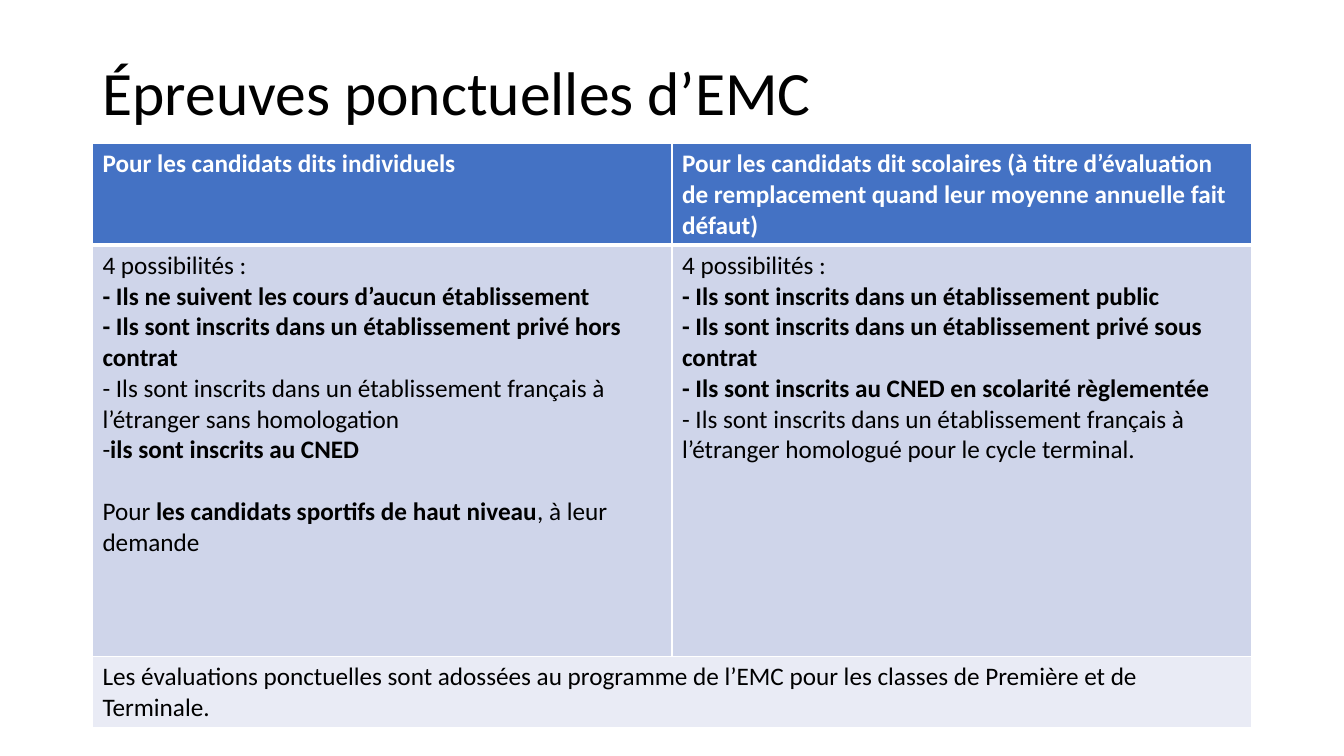
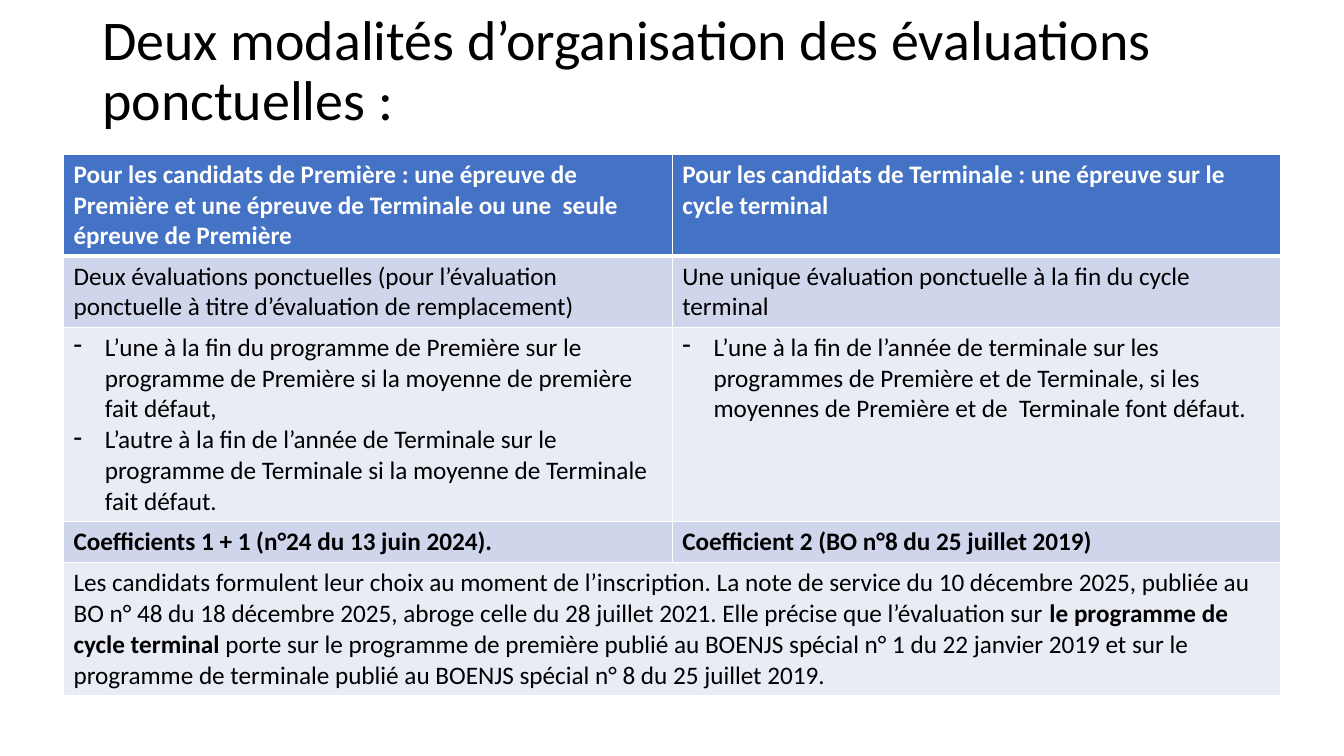
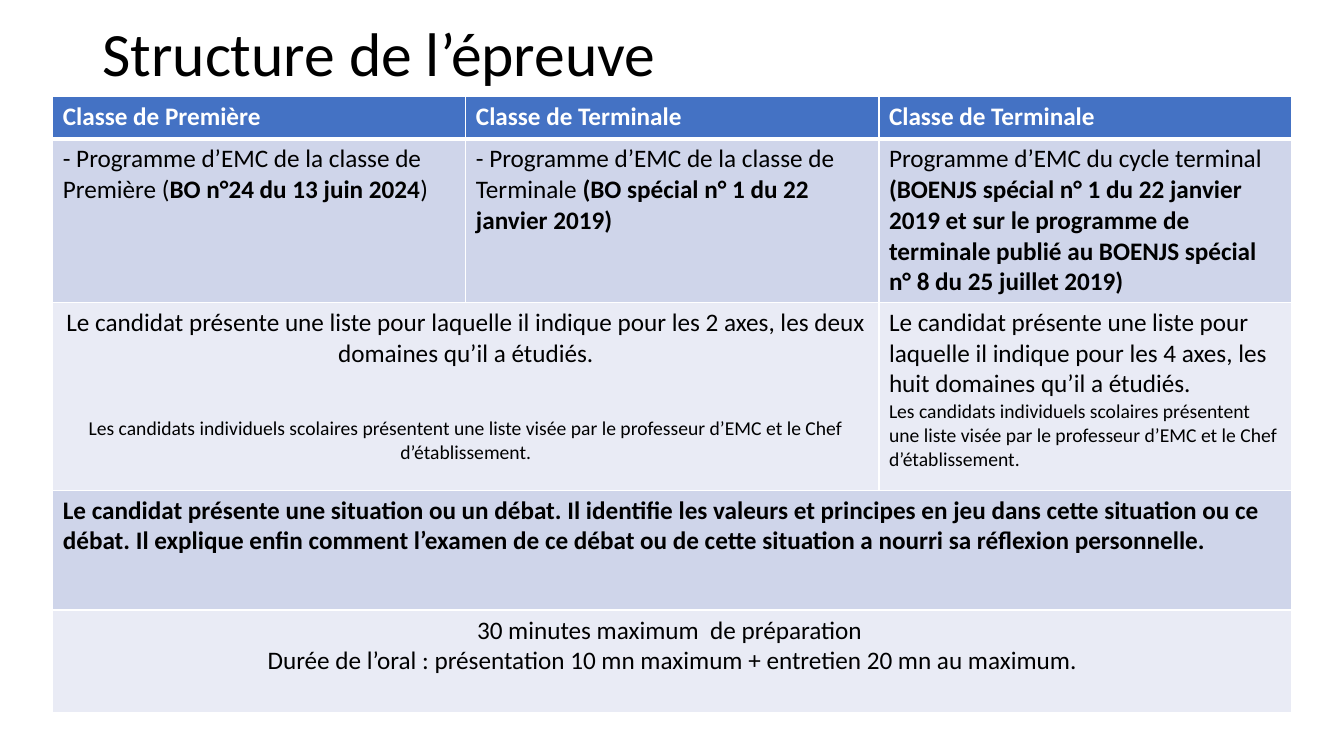
from dataclasses import dataclass

from lxml import etree
from pptx import Presentation
from pptx import util as u
from pptx.dml import color
from pptx.enum import text
from pptx.oxml import ns

# Shared look
COLORS = {"header": "4472C4", "dark_band": "CFD5EA", "light_band": "E9EBF5",
          "ink": "000000", "paper": "FFFFFF"}
FONT = "Calibri"
TITLE_LEFT, TITLE_WIDTH = 2.33, 29.21
BULLET_INDENT = 0.79
THIN, THICK = 1, 3
BOLD_MARK = "**"


@dataclass(frozen=True)
class Para:
    """A paragraph; stretches between ** marks are bold."""
    content: str
    size: float = 18
    centered: bool = False
    dashed: bool = False
    before: float = 0


@dataclass(frozen=True)
class Entry:
    """A table cell covering one or more columns."""
    paras: tuple[Para, ...]
    span: int = 1


@dataclass(frozen=True)
class Row:
    height: float
    entries: tuple[Entry, ...]


@dataclass(frozen=True)
class Page:
    title: str
    title_size: float
    title_top: float
    title_height: float
    left: float
    top: float
    width: float
    columns: int
    rows: tuple[Row, ...]


def entry(*paras: str | Para, span: int = 1) -> Entry:
    return Entry(tuple(Para(p) if isinstance(p, str) else p for p in paras), span)


def rgb(name: str) -> color.RGBColor:
    return color.RGBColor.from_string(COLORS[name])


def add_run(paragraph, content: str, size: float, ink: str, bold: bool) -> None:
    run = paragraph.add_run()
    run.text = content
    font_format = {"name": FONT, "size": u.Pt(size), "bold": bold}
    for attribute, value in font_format.items():
        setattr(run.font, attribute, value)
    run.font.color.rgb = rgb(ink)


def add_dash(paragraph) -> None:
    properties = paragraph._p.get_or_add_pPr()
    indent = u.Cm(BULLET_INDENT)
    properties.set("marL", str(indent))
    properties.set("indent", str(-indent))
    etree.SubElement(properties, ns.qn("a:buFontTx"))
    etree.SubElement(properties, ns.qn("a:buChar"), char="-")


def write_paragraph(paragraph, para: Para, ink: str, all_bold: bool) -> None:
    if para.dashed:
        add_dash(paragraph)
    if para.centered:
        paragraph.alignment = text.PP_ALIGN.CENTER
    if para.before:
        paragraph.space_before = u.Pt(para.before)
    for index, piece in enumerate(para.content.split(BOLD_MARK)):
        if piece:
            add_run(paragraph, piece, para.size, ink, all_bold or index % 2 == 1)


def set_borders(cell, row: int) -> None:
    properties = cell._tc.get_or_add_tcPr()
    widths = {"lnL": THIN, "lnR": THIN,
              "lnT": THICK if row == 1 else THIN,
              "lnB": THICK if row == 0 else THIN}
    for side, width in widths.items():
        line = etree.SubElement(properties, ns.qn(f"a:{side}"), w=str(u.Pt(width)))
        fill = etree.SubElement(line, ns.qn("a:solidFill"))
        etree.SubElement(fill, ns.qn("a:srgbClr"), val=COLORS["paper"])


def draw_title(slide, page: Page) -> None:
    box = slide.shapes.add_textbox(u.Cm(TITLE_LEFT), u.Cm(page.title_top),
                                   u.Cm(TITLE_WIDTH), u.Cm(page.title_height))
    frame = box.text_frame
    frame_format = {"word_wrap": True, "vertical_anchor": text.MSO_ANCHOR.MIDDLE}
    for attribute, value in frame_format.items():
        setattr(frame, attribute, value)
    heading = frame.paragraphs[0]
    heading.line_spacing = 0.9
    add_run(heading, page.title, page.title_size, "ink", False)


def draw_table(slide, page: Page) -> None:
    height = sum(row.height for row in page.rows)
    table = slide.shapes.add_table(len(page.rows), page.columns, u.Cm(page.left),
                                   u.Cm(page.top), u.Cm(page.width),
                                   u.Cm(height)).table
    for attribute, value in {"first_row": False, "horz_banding": False}.items():
        setattr(table, attribute, value)
    for column in table.columns:
        column.width = u.Cm(page.width / page.columns)

    for r, row in enumerate(page.rows):
        table.rows[r].height = u.Cm(row.height)
        band = "header" if r == 0 else ("light_band", "dark_band")[r % 2]
        for c in range(page.columns):
            cell = table.cell(r, c)
            set_borders(cell, r)
            cell.fill.solid()
            cell.fill.fore_color.rgb = rgb(band)
        start = 0
        for item in row.entries:
            cell = table.cell(r, start)
            if item.span > 1:
                cell.merge(table.cell(r, start + item.span - 1))
            frame = cell.text_frame
            for index, para in enumerate(item.paras):
                paragraph = frame.add_paragraph() if index else frame.paragraphs[0]
                write_paragraph(paragraph, para, "paper" if r == 0 else "ink", r == 0)
            start += item.span


# Content
VISA = ("Les candidats individuels scolaires présentent une liste visée par le "
        "professeur d’EMC et le Chef d’établissement.")

CANDIDATES = Page(
    "Épreuves ponctuelles d’EMC", 44, 0.58, 3.68, 2.33, 3.62, 29.21, 2, (
        Row(2.56, (
            entry("Pour les candidats dits individuels"),
            entry("Pour les candidats dit scolaires (à titre d’évaluation de "
                  "remplacement quand leur moyenne annuelle fait défaut)"))),
        Row(10.36, (
            entry("4 possibilités :",
                  "**- Ils ne suivent les cours d’aucun établissement**",
                  "**- Ils sont inscrits dans un établissement privé hors contrat**",
                  "- Ils sont inscrits dans un établissement français à l’étranger "
                  "sans homologation",
                  "-**ils sont inscrits au CNED**",
                  Para("Pour **les candidats sportifs de haut niveau**, à leur demande",
                       before=22)),
            entry("4 possibilités :",
                  "**- Ils sont inscrits dans un établissement public**",
                  "**- Ils sont inscrits dans un établissement privé sous contrat**",
                  "**- Ils sont inscrits au CNED en scolarité règlementée**",
                  "- Ils sont inscrits dans un établissement français à l’étranger "
                  "homologué pour le cycle terminal."))),
        Row(1.8, (
            entry("Les évaluations ponctuelles sont adossées au programme de l’EMC "
                  "pour les classes de Première et de Terminale.", span=2),)),
    ))

MODALITIES = Page(
    "Deux modalités d’organisation des évaluations ponctuelles :",
    40, 0.08, 3.48, 1.6, 3.89, 30.68, 2, (
        Row(2.56, (
            entry("Pour les candidats de Première : une épreuve de Première et une "
                  "épreuve de Terminale ou une  seule épreuve de Première"),
            entry("Pour les candidats de Terminale : une épreuve sur le cycle "
                  "terminal"))),
        Row(1.8, (
            entry("Deux évaluations ponctuelles (pour l’évaluation ponctuelle à titre "
                  "d’évaluation de remplacement)"),
            entry("Une unique évaluation ponctuelle à la fin du cycle terminal"))),
        Row(4.9, (
            entry(Para("L’une à la fin du programme de Première sur le programme de "
                       "Première si la moyenne de première fait défaut,", dashed=True),
                  Para("L’autre à la fin de l’année de Terminale sur le programme de "
                       "Terminale si la moyenne de Terminale fait défaut.",
                       dashed=True)),
            entry(Para("L’une à la fin de l’année de terminale sur les programmes de "
                       "Première et de Terminale, si les moyennes de Première et de  "
                       "Terminale font défaut.", dashed=True)))),
        Row(1.03, (
            entry("**Coefficients 1 + 1 (n°24 du 13 juin 2024).**"),
            entry("**Coefficient 2 (BO n°8 du 25 juillet 2019)**"))),
        Row(3.35, (
            entry("Les candidats formulent leur choix au moment de l’inscription. La "
                  "note de service du 10 décembre 2025, publiée au BO n° 48 du 18 "
                  "décembre 2025, abroge celle du 28 juillet 2021. Elle précise que "
                  "l’évaluation sur **le programme de cycle terminal** porte sur le "
                  "programme de première publié au BOENJS spécial n° 1 du 22 janvier "
                  "2019 et sur le programme de terminale publié au BOENJS spécial "
                  "n° 8 du 25 juillet 2019.", span=2),)),
    ))

STRUCTURE = Page(
    "Structure de l’épreuve", 44, 0, 2.84, 1.33, 2.42, 31.23, 3, (
        Row(1.08, (entry("Classe de Première"),
                   entry("Classe de Terminale"),
                   entry("Classe de Terminale"))),
        Row(4.12, (
            entry("- Programme d’EMC de la classe de Première "
                  "(**BO n°24 du 13 juin 2024**)"),
            entry("- Programme d’EMC de la classe de Terminale "
                  "**(BO spécial n° 1 du 22 janvier 2019)**"),
            entry("Programme d’EMC du cycle terminal **(BOENJS spécial n° 1 du 22 "
                  "janvier 2019 et sur le programme de terminale publié au BOENJS "
                  "spécial n° 8 du 25 juillet 2019)**"))),
        Row(4.73, (
            entry(Para("Le candidat présente une liste pour laquelle il indique pour "
                       "les 2 axes, les deux domaines qu’il a étudiés.",
                       centered=True),
                  Para(VISA, 14, centered=True, before=34), span=2),
            entry("Le candidat présente une liste pour laquelle il indique pour les "
                  "4 axes, les huit domaines qu’il a étudiés.",
                  Para(VISA, 14)))),
        Row(3.02, (
            entry("**Le candidat présente une situation ou un débat. Il identifie les "
                  "valeurs et principes en jeu dans cette situation ou ce débat. Il "
                  "explique enfin comment l’examen de ce débat ou de cette situation "
                  "a nourri sa réflexion personnelle.**", span=3),)),
        Row(2.59, (
            entry(Para("30 minutes maximum  de préparation ", centered=True),
                  Para("Durée de l’oral : présentation 10 mn maximum + entretien "
                       "20 mn au maximum.", centered=True), span=3),)),
    ))


def main() -> None:
    deck = Presentation()
    for attribute, value in {"slide_width": 33.87, "slide_height": 19.05}.items():
        setattr(deck, attribute, u.Cm(value))
    blank = deck.slide_layouts[6]
    for page in (CANDIDATES, MODALITIES, STRUCTURE):
        slide = deck.slides.add_slide(blank)
        draw_title(slide, page)
        draw_table(slide, page)
    deck.save("out.pptx")


if __name__ == "__main__":
    main()
